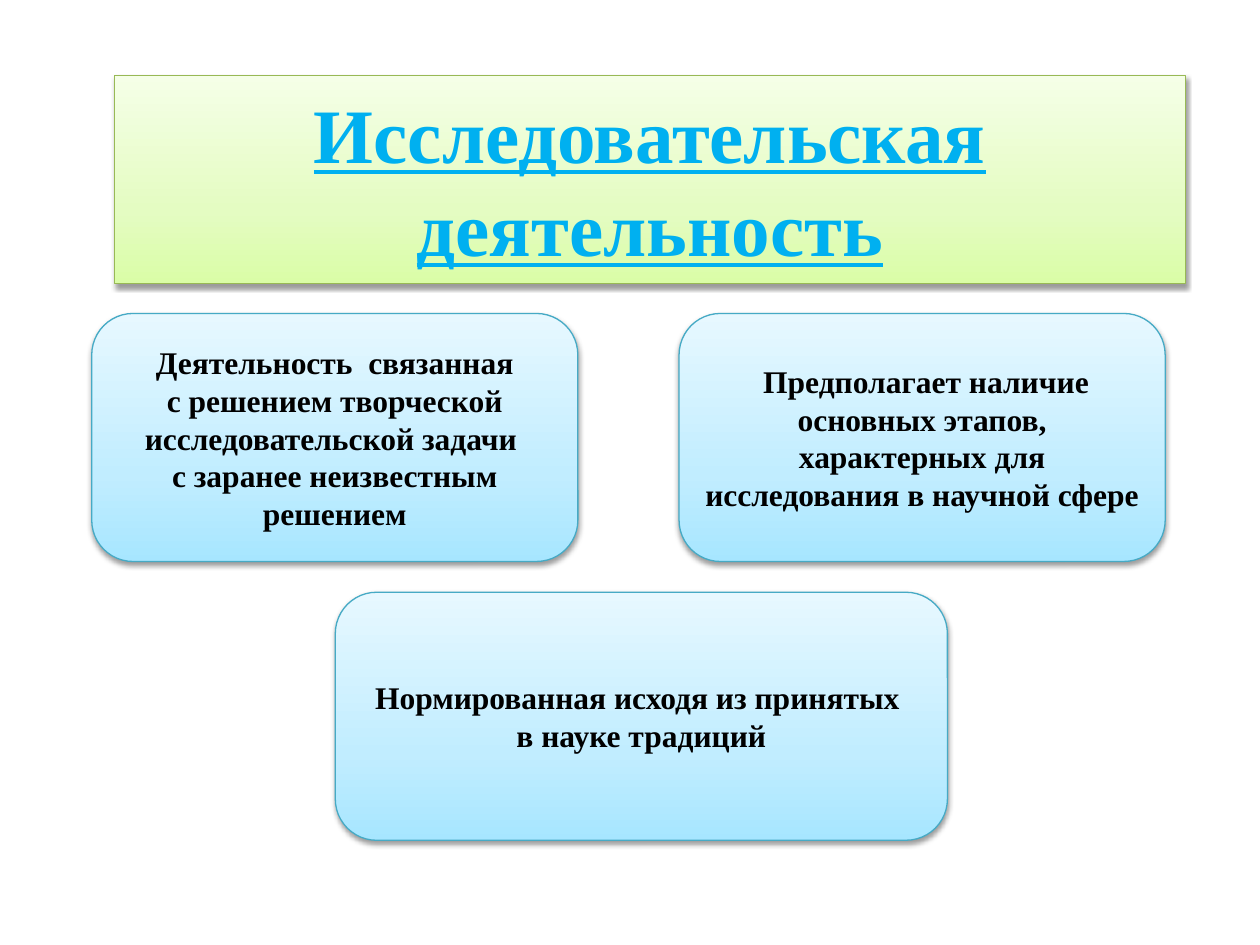
import copy

import pptx
import pptx.dml.color
import pptx.enum.shapes
import pptx.enum.text
import pptx.oxml
import pptx.oxml.ns
import pptx.util
from pptx.util import Cm

FONT = "Times New Roman"
GREEN = ("DAFDA7", "E4FCC2", "F5FFE7")
BLUE = ("A7E6FF", "C1EDFF", "E7F8FF")
STOP_POSITIONS = (0, 0.35, 1)
SHADOW = (
    f'<a:outerShdw {pptx.oxml.ns.nsdecls("a")} blurRad="40000" dist="20000" '
    'dir="5400000" rotWithShape="0"><a:srgbClr val="000000">'
    '<a:alpha val="38000"/></a:srgbClr></a:outerShdw>'
)


def rgb(hex_color):
    return pptx.dml.color.RGBColor.from_string(hex_color)


def style_panel(panel, gradient, border):
    """Give a panel its upward gradient, thin border and soft shadow."""
    properties = panel.element.spPr
    panel.fill.gradient()
    panel.fill.gradient_angle = 90
    stop_list = properties.find(".//" + pptx.oxml.ns.qn("a:gsLst"))
    stop_list.append(copy.deepcopy(stop_list[-1]))
    for stop, color, position in zip(panel.fill.gradient_stops, gradient, STOP_POSITIONS):
        stop.color.rgb = rgb(color)
        stop.position = position
    panel.line.color.rgb = rgb(border)
    panel.line.width = pptx.util.Pt(0.75)
    panel.shadow.inherit = False
    effects = properties.find(pptx.oxml.ns.qn("a:effectLst"))
    effects.append(pptx.oxml.parse_xml(SHADOW))


def write_text(panel, paragraphs, size, color, underline=None):
    frame = panel.text_frame
    frame.word_wrap = True
    frame.auto_size = pptx.enum.text.MSO_AUTO_SIZE.NONE
    frame.vertical_anchor = pptx.enum.text.MSO_ANCHOR.MIDDLE
    for index, text in enumerate(paragraphs):
        paragraph = frame.add_paragraph() if index else frame.paragraphs[0]
        paragraph.alignment = pptx.enum.text.PP_ALIGN.CENTER
        run = paragraph.add_run()
        run.text = text
        run.font.name = FONT
        run.font.size = pptx.util.Pt(size)
        run.font.bold = True
        run.font.underline = underline
        run.font.color.rgb = rgb(color)


def place_title(slide, left, top, width, height):
    title = slide.shapes.title
    title.left, title.top, title.width, title.height = left, top, width, height
    style_panel(title, GREEN, "98B955")
    write_text(title, ["Исследовательская деятельность"], 44, "00B0F0", underline=True)


def add_feature(slide, left, top, width, height, paragraphs):
    feature = slide.shapes.add_shape(
        pptx.enum.shapes.MSO_SHAPE.ROUNDED_RECTANGLE, left, top, width, height)
    style_panel(feature, BLUE, "46AAC5")
    write_text(feature, paragraphs, 18, "000000")


def main():
    presentation = pptx.Presentation()
    presentation.slide_width, presentation.slide_height = Cm(25.4), Cm(19.05)
    slide = presentation.slides.add_slide(presentation.slide_layouts[5])

    place_title(slide, Cm(2.31), Cm(1.52), Cm(21.59), Cm(4.19))

    feature_height = Cm(5)
    upper_top, lower_top = Cm(6.32), Cm(11.94)
    upper_width = Cm(9.8)
    add_feature(slide, Cm(1.85), upper_top, upper_width, feature_height, [
        " Деятельность  связанная ",
        "с решением творческой исследовательской задачи ",
        "с заранее неизвестным решением",
    ])
    add_feature(slide, Cm(13.69), upper_top, upper_width, feature_height, [
        " Предполагает наличие основных этапов, характерных для "
        "исследования в научной сфере",
    ])
    add_feature(slide, Cm(6.76), lower_top, Cm(12.34), feature_height, [
        "Нормированная исходя из принятых ",
        "в науке традиций",
    ])

    presentation.save("out.pptx")


if __name__ == "__main__":
    main()
